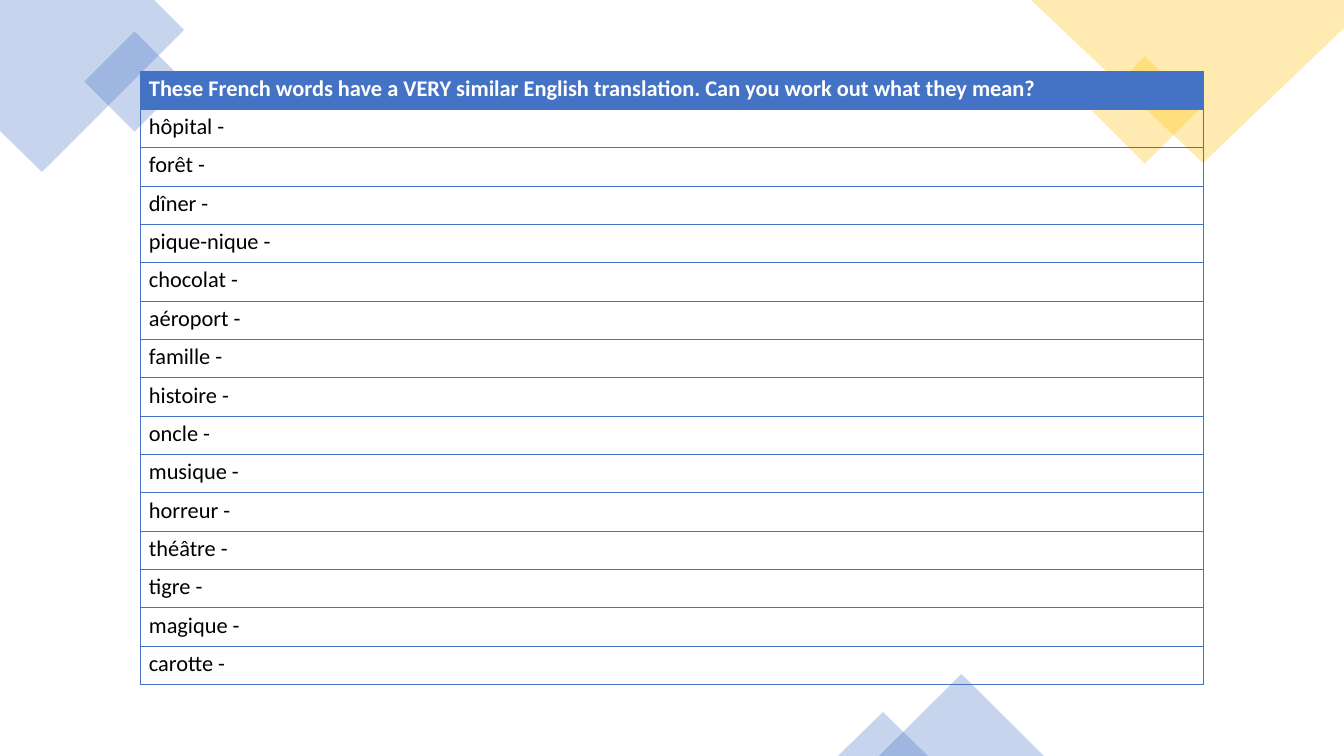
from lxml.etree import SubElement
from pptx import Presentation
from pptx.dml.color import RGBColor
from pptx.enum.shapes import MSO_SHAPE as Preset
from pptx.oxml.ns import qn
from pptx.util import Pt

EMU_PER_PX = 914400 / 100.8
COLOURS = {"blue": "4472C4", "gold": "FFC000", "white": "FFFFFF", "black": "000000"}

QUESTION = ("These French words have a VERY similar English translation. "
            "Can you work out what they mean?")
FRENCH_WORDS = ["hôpital", "forêt", "dîner", "pique-nique", "chocolat", "aéroport",
                "famille", "histoire", "oncle", "musique", "horreur", "théâtre",
                "tigre", "magique", "carotte"]


def px(length):
    return round(length * EMU_PER_PX)


def rgb(colour):
    return RGBColor.from_string(COLOURS[colour])


def write(frame, text, *, size=16, colour="black", bold=False, font="Calibri"):
    run = frame.paragraphs[0].add_run()
    run.text = text
    run.font.name, run.font.size, run.font.bold = font, Pt(size), bold
    run.font.color.rgb = rgb(colour)


class WorksheetSlide:
    tint_percent = 30
    border_colour = "blue"
    border_width = Pt(0.5)
    cell_margins = {"left": 9, "right": 9, "top": 4, "bottom": 4}

    def __init__(self, slide):
        self.shapes = slide.shapes

    def tint(self, shape, colour):
        """Give the shape a see-through fill with no line or shadow."""
        shape.shadow.inherit = False
        shape.line.fill.background()
        shape.fill.solid()
        shape.fill.fore_color.rgb = rgb(colour)
        fill_colour = shape.element.spPr.find(qn("a:solidFill"))[0]
        SubElement(fill_colour, qn("a:alpha"), val=str(self.tint_percent * 1000))

    def preset(self, kind, left, top, width, height, colour, rotation=0):
        shape = self.shapes.add_shape(kind, px(left), px(top), px(width), px(height))
        shape.rotation = rotation
        self.tint(shape, colour)

    def diamond(self, left, top, side, colour):
        self.preset(Preset.RECTANGLE, left, top, side, side, colour, rotation=315)

    def triangle(self, left, top, width, height, colour):
        self.preset(Preset.ISOSCELES_TRIANGLE, left, top, width, height, colour)

    def polygon(self, corners, colour):
        outline = self.shapes.build_freeform(*corners[0], scale=EMU_PER_PX)
        outline.add_line_segments(corners[1:], close=True)
        self.tint(outline.convert_to_shape(), colour)

    def border(self, cell):
        properties = cell._tc.get_or_add_tcPr()
        for side in ("lnL", "lnR", "lnT", "lnB"):
            line = SubElement(properties, qn(f"a:{side}"), w=str(self.border_width))
            fill = SubElement(line, qn("a:solidFill"))
            SubElement(fill, qn("a:srgbClr"), val=COLOURS[self.border_colour])

    def word_table(self, left, top, width, height, heading, entries):
        table = self.shapes.add_table(len(entries) + 1, 1, px(left), px(top),
                                      px(width), px(height)).table
        table.horz_banding = False
        for row, text in enumerate([heading, *entries]):
            cell = table.cell(row, 0)
            for side, margin in self.cell_margins.items():
                setattr(cell, f"margin_{side}", px(margin))
            self.border(cell)
            if row == 0:
                cell.fill.solid()
                cell.fill.fore_color.rgb = rgb("blue")
                write(cell.text_frame, text, colour="white", bold=True)
            else:
                cell.fill.background()
                write(cell.text_frame, text)


def main():
    deck = Presentation()
    deck.slide_width, deck.slide_height = px(1344), px(756)
    blank_layout = deck.slide_layouts[6]
    worksheet = WorksheetSlide(deck.slides.add_slide(blank_layout))

    worksheet.polygon([(154, 0), (0, 0), (0, 131), (42, 172), (184, 30)], "blue")
    worksheet.diamond(99, 46, 71, "blue")
    worksheet.diamond(1107, 72, 76, "gold")
    worksheet.polygon([(1344, 0), (1031, 0), (1203, 163), (1344, 28)], "gold")
    worksheet.triangle(879, 674, 165, 82, "blue")
    worksheet.triangle(838, 712, 90, 44, "blue")
    worksheet.word_table(140, 71, 1063, 614, QUESTION,
                         [f"{word} -" for word in FRENCH_WORDS])

    deck.save("out.pptx")


if __name__ == "__main__":
    main()
